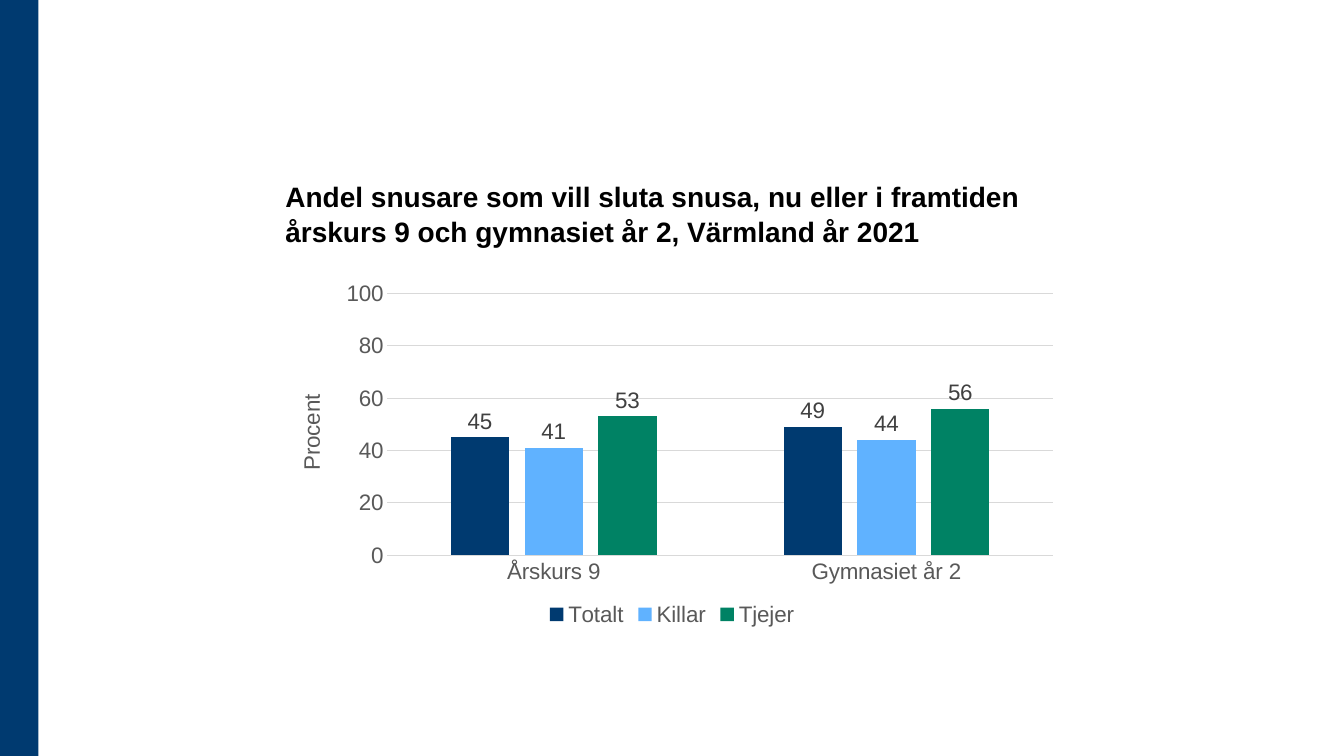
"""Build the slide on young snus users who want to quit."""
from dataclasses import dataclass

from pptx import Presentation
from pptx.chart.data import CategoryChartData
from pptx.dml.color import RGBColor
from pptx.enum.chart import XL_CHART_TYPE, XL_LABEL_POSITION, XL_LEGEND_POSITION, XL_TICK_MARK
from pptx.enum.shapes import MSO_SHAPE
from pptx.enum.text import MSO_ANCHOR, MSO_AUTO_SIZE, PP_ALIGN
from pptx.util import Inches, Pt

COLUMNS = XL_CHART_TYPE.COLUMN_CLUSTERED
OUTSIDE_END = XL_LABEL_POSITION.OUTSIDE_END
BOTTOM_LEGEND = XL_LEGEND_POSITION.BOTTOM
NO_TICK = XL_TICK_MARK.NONE
RECT = MSO_SHAPE.RECTANGLE
ANCHOR_BOTTOM = MSO_ANCHOR.BOTTOM
NO_AUTOFIT = MSO_AUTO_SIZE.NONE
LEFT = PP_ALIGN.LEFT

FONT = "Arial"
NAVY, SKY, GREEN = "003A70", "60B2FF", "008264"
BLACK, DARK, GREY, RULE = "000000", "404040", "595959", "D9D9D9"
CONTENT_LEFT, CONTENT_WIDTH = 2.73, 7.87
TITLE = ("Andel snusare som vill sluta snusa, nu eller i framtiden "
         "årskurs 9 och gymnasiet år 2, Värmland år 2021")
GRADES = ("Årskurs 9", "Gymnasiet år 2")


@dataclass
class Group:
    """One series of the chart."""
    name: str
    values: tuple[int, ...]
    color: str


GROUPS = (
    Group("Totalt", (45, 49), NAVY),
    Group("Killar", (41, 44), SKY),
    Group("Tjejer", (53, 56), GREEN),
)


def rgb(color: str) -> RGBColor:
    """Turn a hex string into a colour."""
    return RGBColor.from_string(color)


def style_font(font, size: float, color: str, bold: bool = False) -> None:
    """Set face, size, colour and weight."""
    font.name, font.size, font.bold = FONT, Pt(size), bold
    font.color.rgb = rgb(color)


def style_line(line, color: str) -> None:
    """Draw a thin rule in the given colour."""
    line.color.rgb = rgb(color)
    line.width = Pt(0.75)


def add_side_band(s, height: int) -> None:
    """Draw the band along the left edge."""
    band = s.shapes.add_shape(RECT, 0, 0, Inches(0.38), height)
    band.shadow.inherit = False
    band.fill.solid()
    band.fill.fore_color.rgb = rgb(NAVY)
    band.line.fill.background()


def set_title(s) -> None:
    """Place and format the title."""
    title = s.shapes.title
    title.left, title.top = Inches(CONTENT_LEFT), Inches(1.06)
    title.width, title.height = Inches(CONTENT_WIDTH), Inches(1.45)
    tf = title.text_frame
    tf.text = TITLE
    tf.word_wrap = True
    tf.auto_size = NO_AUTOFIT
    tf.vertical_anchor = ANCHOR_BOTTOM
    p = tf.paragraphs[0]
    p.alignment = LEFT
    p.line_spacing = 1.05
    style_font(p.runs[0].font, 20, BLACK, bold=True)


def format_axes(chart) -> None:
    """Format both axes and the gridlines."""
    for axis in (chart.category_axis, chart.value_axis):
        axis.major_tick_mark = axis.minor_tick_mark = NO_TICK
        style_font(axis.tick_labels.font, 16, GREY)
    style_line(chart.category_axis.format.line, RULE)
    axis = chart.value_axis
    axis.minimum_scale, axis.maximum_scale, axis.major_unit = 0, 100, 20
    axis.format.line.fill.background()
    style_line(axis.major_gridlines.format.line, RULE)
    axis.tick_labels.number_format = "0"
    axis.tick_labels.number_format_is_linked = False
    tf = axis.axis_title.text_frame
    tf.text = "Procent"
    style_font(tf.paragraphs[0].runs[0].font, 16, GREY)


def format_series(series, group: Group) -> None:
    """Colour a series and label its columns."""
    series.format.fill.solid()
    series.format.fill.fore_color.rgb = rgb(group.color)
    labels = series.data_labels
    labels.show_value = True
    labels.position = OUTSIDE_END
    labels.number_format = "0"
    labels.number_format_is_linked = False
    style_font(labels.font, 16, DARK)


def add_column_chart(s) -> None:
    """Add the clustered column chart."""
    data = CategoryChartData(number_format="0")
    data.categories = GRADES
    for group in GROUPS:
        data.add_series(group.name, group.values)
    chart = s.shapes.add_chart(COLUMNS, Inches(CONTENT_LEFT), Inches(2.72),
                               Inches(CONTENT_WIDTH), Inches(3.54), data).chart
    style_font(chart.font, 16, BLACK)
    chart.has_title = False
    chart.has_legend = True
    chart.legend.position = BOTTOM_LEGEND
    chart.legend.include_in_layout = False
    style_font(chart.legend.font, 16, GREY)
    plot = chart.plots[0]
    plot.vary_by_categories = False
    plot.gap_width, plot.overlap = 219, -27
    format_axes(chart)
    for series, group in zip(plot.series, GROUPS):
        format_series(series, group)


def main() -> None:
    """Build and save the presentation."""
    prs = Presentation()
    prs.slide_width, prs.slide_height = Inches(13.33), Inches(7.5)
    s = prs.slides.add_slide(prs.slide_layouts[5])
    add_side_band(s, prs.slide_height)
    set_title(s)
    add_column_chart(s)
    prs.save("out.pptx")


if __name__ == "__main__":
    main()
